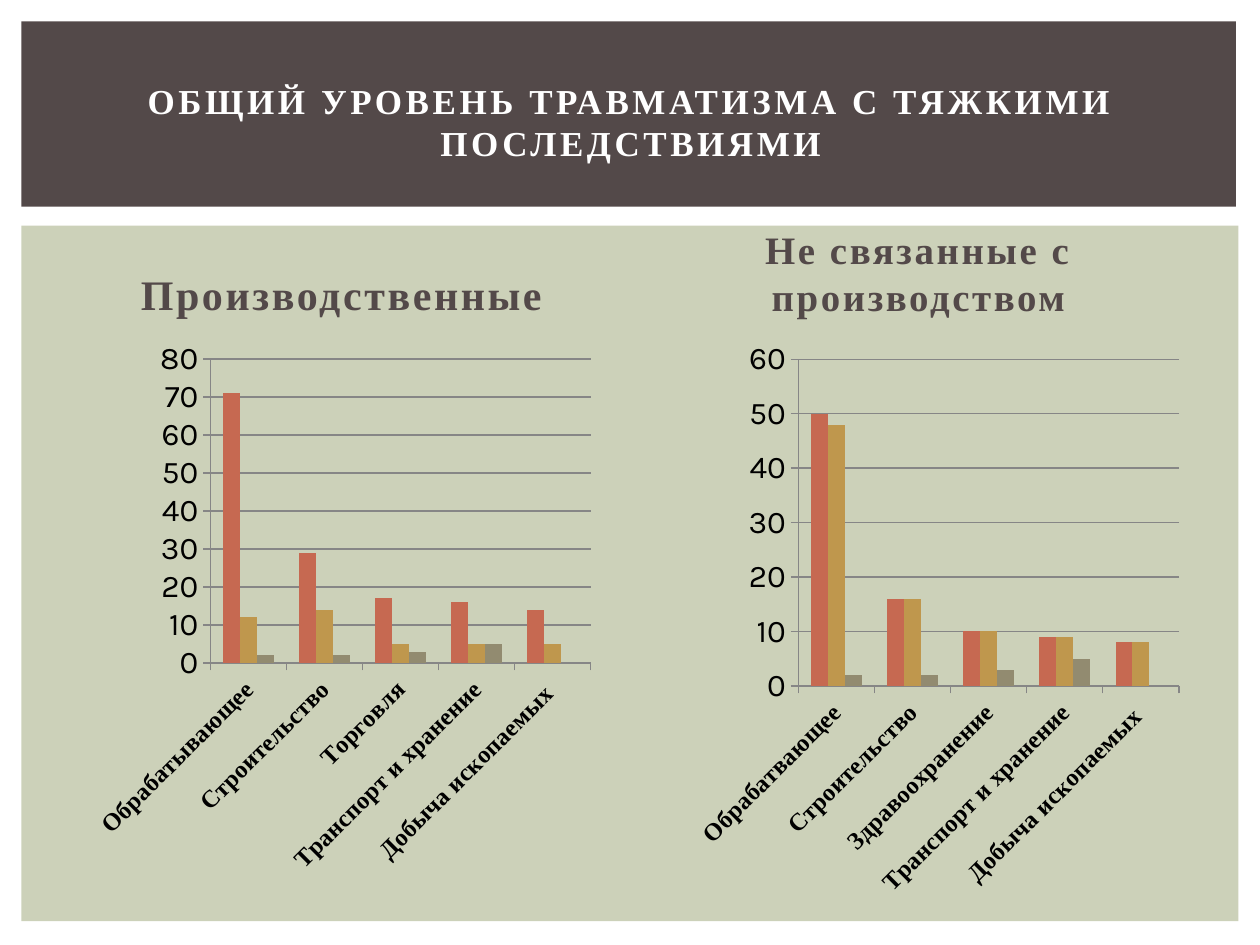
"""Build the slide on serious injuries: a title band above two column charts."""
from dataclasses import dataclass

from lxml import etree
from pptx import Presentation
from pptx.chart.data import CategoryChartData
from pptx.dml.color import RGBColor
from pptx.enum.chart import XL_CHART_TYPE, XL_TICK_MARK
from pptx.enum.shapes import MSO_SHAPE
from pptx.enum.text import MSO_ANCHOR, PP_ALIGN
from pptx.util import Inches, Pt

CLUSTERED = XL_CHART_TYPE.COLUMN_CLUSTERED
TICK_OUT = XL_TICK_MARK.OUTSIDE
RECTANGLE = MSO_SHAPE.RECTANGLE
MIDDLE, BOTTOM = MSO_ANCHOR.MIDDLE, MSO_ANCHOR.BOTTOM
CENTER = PP_ALIGN.CENTER
SLIDE_WIDTH, SLIDE_HEIGHT = Inches(10), Inches(7.5)
BLANK_LAYOUT = 6
LABEL_ROTATION = "-2700000"


@dataclass(frozen=True)
class Theme:
    """Colours, fonts and type sizes of the slide."""
    panel: str = "CCD1B9"
    band: str = "534949"
    light: str = "FFFFFF"
    dark: str = "000000"
    rule: str = "868686"
    series: tuple[str, ...] = ("C66951", "BF974D", "928B70")
    serif: str = "Times New Roman"
    sans: str = "Karla"
    title_size: float = 20
    value_size: float = 18
    category_size: float = 14


@dataclass(frozen=True)
class Box:
    """A rectangle in percent of the slide's width and height."""
    left: float
    top: float
    width: float
    height: float

    def emu(self) -> tuple[int, int, int, int]:
        """Return the rectangle in slide units."""
        return (int(SLIDE_WIDTH * self.left / 100), int(SLIDE_HEIGHT * self.top / 100),
                int(SLIDE_WIDTH * self.width / 100), int(SLIDE_HEIGHT * self.height / 100))


@dataclass(frozen=True)
class Heading:
    """A centred bold text with letter spacing in points."""
    text: str
    box: Box
    size: float
    color: str
    spacing: float
    anchor: MSO_ANCHOR
    space_before: float = 0


@dataclass(frozen=True)
class InjuryChart:
    """A column chart with its heading and the shares its plot takes."""
    heading: Heading
    box: Box
    plot: dict[str, float]
    categories: tuple[str, ...]
    values: tuple[tuple[int | None, ...], ...]


THEME = Theme()
SEVERITY_REST = (2, 2, 3, 5, None)
PANELS = ((Box(1.7, 23.87, 96.6, 73.6), THEME.panel),
          (Box(1.7, 2.27, 96.4, 19.6), THEME.band))
TITLE = Heading("ОБЩИЙ УРОВЕНЬ ТРАВМАТИЗМА С ТЯЖКИМИ ПОСЛЕДСТВИЯМИ",
                Box(4.2, 5.2, 91.7, 15.33), THEME.title_size, THEME.light, 2, MIDDLE)


def chart_heading(text: str, left: float, size: float) -> Heading:
    """Return a heading that stands above a chart."""
    return Heading(text, Box(left, 25.07, 44.2, 9.33), size, THEME.band, 1.5, BOTTOM, size / 5)


CHARTS = (
    InjuryChart(chart_heading("Производственные", 5, 24), Box(2.8, 35.6, 46.4, 59.6),
                {"x": 0.3, "y": 0.04, "w": 0.65, "h": 0.54},
                ("Обрабатывающее", "Строительство", "Торговля",
                 "Транспорт и хранение", "Добыча ископаемых "),
                ((71, 29, 17, 16, 14), (12, 14, 5, 5, 5), SEVERITY_REST)),
    InjuryChart(chart_heading("Не связанные с производством", 50.8, 22.2),
                Box(50.8, 35.6, 46.5, 60.67),
                {"x": 0.27, "y": 0.04, "w": 0.65, "h": 0.57},
                ("Обрабатвающее", "Строительство", "Здравоохранение",
                 "Транспорт и хранение", "Добыча ископаемых "),
                ((50, 16, 10, 9, 8), (48, 16, 10, 9, 8), SEVERITY_REST)),
)


def apply(target, formats: dict) -> None:
    """Set each attribute named in the format values."""
    for attribute, value in formats.items():
        setattr(target, attribute, value)


def style_font(font, name: str, size: float, color: str, bold: bool) -> None:
    """Give a font its face, size, weight and colour."""
    apply(font, {"name": name, "size": Pt(size), "bold": bold})
    font.color.rgb = RGBColor.from_string(color)


def draw_panel(slide, box: Box, color: str) -> None:
    """Draw a plain filled rectangle."""
    panel = slide.shapes.add_shape(RECTANGLE, *box.emu())
    panel.shadow.inherit = False
    panel.fill.solid()
    panel.fill.fore_color.rgb = RGBColor.from_string(color)
    panel.line.fill.background()


def draw_heading(slide, heading: Heading) -> None:
    """Write a heading in its box."""
    frame = slide.shapes.add_textbox(*heading.box.emu()).text_frame
    apply(frame, {"word_wrap": True, "vertical_anchor": heading.anchor})
    paragraph = frame.paragraphs[0]
    apply(paragraph, {"alignment": CENTER, "space_before": Pt(heading.space_before)})
    run = paragraph.add_run()
    run.text = heading.text
    style_font(run.font, THEME.serif, heading.size, heading.color, True)
    run.font._element.set("spc", str(int(heading.spacing * 100)))


def place_plot(chart, shares: dict[str, float]) -> None:
    """Fix the inner plot area at shares of the chart's size."""
    plot_area = chart._chartSpace.chart.plotArea
    namespace = etree.QName(plot_area).namespace
    for previous in plot_area.findall(f"{{{namespace}}}layout"):
        plot_area.remove(previous)
    layout = etree.Element(f"{{{namespace}}}layout")
    manual = etree.SubElement(layout, f"{{{namespace}}}manualLayout")
    settings = {"layoutTarget": "inner", "xMode": "edge", "yMode": "edge", **shares}
    for tag, value in settings.items():
        etree.SubElement(manual, f"{{{namespace}}}{tag}").set("val", str(value))
    plot_area.insert(0, layout)


def draw_chart(slide, injuries: InjuryChart) -> None:
    """Draw a clustered column chart under its heading."""
    draw_heading(slide, injuries.heading)
    data = CategoryChartData()
    data.categories = injuries.categories
    for number, values in enumerate(injuries.values, 1):
        data.add_series(f"Series {number}", values)
    chart = slide.shapes.add_chart(CLUSTERED, *injuries.box.emu(), data).chart
    apply(chart, {"has_legend": False, "has_title": False})
    style_font(chart.font, THEME.sans, THEME.value_size, THEME.dark, False)
    apply(chart.plots[0], {"gap_width": 150, "overlap": 0, "vary_by_categories": False})
    for series, color in zip(chart.plots[0].series, THEME.series):
        series.format.fill.solid()
        series.format.fill.fore_color.rgb = RGBColor.from_string(color)
    categories, amounts = chart.category_axis, chart.value_axis
    amounts.has_major_gridlines = True
    for axis in (categories, amounts):
        axis.major_tick_mark = TICK_OUT
    for rule in (categories, amounts, amounts.major_gridlines):
        rule.format.line.color.rgb = RGBColor.from_string(THEME.rule)
        rule.format.line.width = Pt(0.75)
    style_font(categories.tick_labels.font, THEME.serif, THEME.category_size, THEME.dark, True)
    categories._element.txPr.bodyPr.set("rot", LABEL_ROTATION)
    place_plot(chart, injuries.plot)


def main() -> None:
    """Build and save the slide."""
    presentation = Presentation()
    apply(presentation, {"slide_width": SLIDE_WIDTH, "slide_height": SLIDE_HEIGHT})
    slide = presentation.slides.add_slide(presentation.slide_layouts[BLANK_LAYOUT])
    for box, color in PANELS:
        draw_panel(slide, box, color)
    draw_heading(slide, TITLE)
    for injuries in CHARTS:
        draw_chart(slide, injuries)
    presentation.save("out.pptx")


if __name__ == "__main__":
    main()
